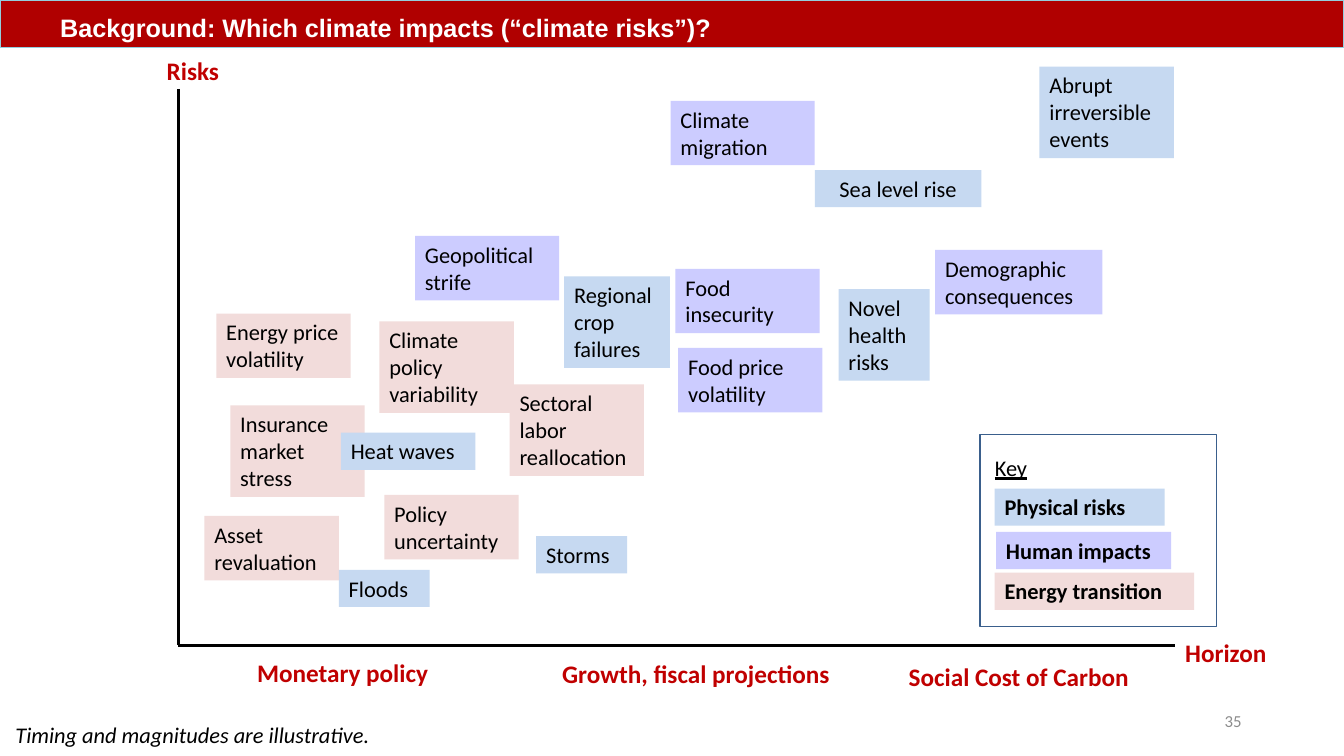
from dataclasses import dataclass

from lxml import etree
from pptx import Presentation
from pptx.dml.color import RGBColor
from pptx.enum import shapes, text
from pptx.util import Pt

HUES = {
    "banner": "B00000", "trim": "93CDDD", "white": "FFFFFF",
    "black": "000000", "red": "C00000", "gray": "8C8C8C", "frame": "3A5F8C",
    "physical": "C6D9F1", "human": "CCCCFF", "energy": "F2DCDB",
}
LEFT, CENTER, RIGHT = (text.PP_ALIGN.LEFT, text.PP_ALIGN.CENTER,
                       text.PP_ALIGN.RIGHT)
TOP, MIDDLE, BOTTOM = (text.MSO_ANCHOR.TOP, text.MSO_ANCHOR.MIDDLE,
                       text.MSO_ANCHOR.BOTTOM)


@dataclass
class Risk:
    label: str
    kind: str
    x: float
    y: float
    width: float
    lines: int = 1
    bold: bool = False
    align: int = LEFT


@dataclass
class Label:
    words: str
    x: float
    y: float
    width: float


RISKS = [
    Risk("Asset revaluation", "energy", 146, 368.5, 96, 2),
    Risk("Regional crop failures", "physical", 403, 197.5, 75.5, 3),
    Risk("Climate migration", "human", 479, 72, 103, 2),
    Risk("Storms", "physical", 383, 383, 65),
    Risk("Food price volatility", "human", 484.5, 248.5, 103, 2),
    Risk("Demographic consequences", "human", 668, 178.5, 119.5, 2),
    Risk("Floods", "physical", 242, 407, 65),
    Risk("Geopolitical strife", "human", 296.5, 168.5, 103, 2),
    Risk("Abrupt irreversible events", "physical", 742.5, 47.5, 96, 3),
    Risk("Sea level rise", "physical", 582, 121.5, 119, align=CENTER),
    Risk("Energy price volatility", "energy", 154.5, 224, 96, 2),
    Risk("Sectoral labor reallocation", "energy", 364, 274.5, 96, 3),
    Risk("Insurance market stress", "energy", 164.5, 289.5, 96, 3),
    Risk("Climate policy variability", "energy", 271, 229.5, 96, 3),
    Risk("Policy uncertainty", "energy", 274.5, 353.5, 96, 2),
    Risk("Novel health risks", "physical", 599, 206.5, 65, 3),
    Risk("Food insecurity", "human", 482.5, 192, 103, 2),
    Risk("Heat waves", "physical", 243.5, 309, 96),
]
KEY = [
    Risk("Physical risks", "physical", 710.5, 349, 121.5, bold=True),
    Risk("Energy transition", "energy", 710.5, 409, 142.5, bold=True),
    Risk("Human impacts", "human", 711.5, 380, 125, bold=True),
]
LABELS = [
    Label("Risks", 112, 36, 52),
    Label("Horizon", 839.5, 452, 73),
    Label("Monetary policy", 176.5, 466, 137.5),
    Label("Growth, fiscal projections", 394.5, 467, 207.5),
    Label("Social Cost of Carbon", 642, 469, 173),
]


def color(name: str) -> RGBColor:
    return RGBColor.from_string(HUES[name])


def write(shape, words: str, *, size: float = 16, hue: str = "black",
          face: str = "Calibri", bold: bool = False, italic: bool = False,
          under: bool = False, align: int = LEFT, anchor: int = TOP,
          wrap: bool = True, grow: bool = True) -> None:
    frame = shape.text_frame
    frame.word_wrap = wrap
    frame.auto_size = (text.MSO_AUTO_SIZE.SHAPE_TO_FIT_TEXT if grow
                       else text.MSO_AUTO_SIZE.NONE)
    frame.vertical_anchor = anchor
    para = frame.paragraphs[0]
    para.alignment = align
    run = para.add_run()
    run.text = words
    font = run.font
    font.name, font.size = face, Pt(size)
    font.bold, font.italic, font.underline = bold, italic, under
    font.color.rgb = color(hue)


def add_text(slide, words: str, x: float, y: float, width: float,
             height: float, **form) -> None:
    box = slide.shapes.add_textbox(Pt(x), Pt(y), Pt(width), Pt(height))
    write(box, words, **form)


def add_rect(slide, x: float, y: float, width: float, height: float):
    rect = slide.shapes.add_shape(shapes.MSO_SHAPE.RECTANGLE,
                                  Pt(x), Pt(y), Pt(width), Pt(height))
    rect.shadow.inherit = False
    return rect


def add_risk(slide, risk: Risk) -> None:
    rect = add_rect(slide, risk.x, risk.y, risk.width,
                    7.2 + 19.4 * risk.lines)
    rect.fill.solid()
    rect.fill.fore_color.rgb = color(risk.kind)
    rect.line.fill.background()
    write(rect, risk.label, bold=risk.bold, align=risk.align)


def add_axis(slide, x1: float, y1: float, x2: float, y2: float) -> None:
    axis = slide.shapes.add_connector(shapes.MSO_CONNECTOR.STRAIGHT,
                                      Pt(x1), Pt(y1), Pt(x2), Pt(y2))
    axis.line.color.rgb = color("black")
    axis.line.width = Pt(2)
    props = axis._element.spPr
    etree.SubElement(props, "{http://schemas.openxmlformats.org/"
                            "drawingml/2006/main}effectLst")


def add_title(slide) -> None:
    title = slide.shapes.title
    title.left, title.top = Pt(0), Pt(0)
    title.width, title.height = Pt(960), Pt(34)
    title.fill.solid()
    title.fill.fore_color.rgb = color("banner")
    title.line.color.rgb = color("trim")
    title.line.width = Pt(0)
    title.text_frame.margin_left = Pt(43)
    write(title, "Background: Which climate impacts (“climate risks”)?",
          size=18, hue="white", face="Arial", bold=True, anchor=BOTTOM,
          grow=False)


def add_key(slide) -> None:
    for risk in KEY:
        add_risk(slide, risk)
    add_text(slide, "Key", 703.5, 320.5, 38, 26.6, under=True, wrap=False)
    frame = add_rect(slide, 700, 310.5, 169, 137)
    frame.fill.background()
    frame.line.color.rgb = color("frame")
    frame.line.width = Pt(1)


def main() -> None:
    deck = Presentation()
    deck.slide_width, deck.slide_height = Pt(960), Pt(540)
    slide = deck.slides.add_slide(deck.slide_layouts[5])
    add_title(slide)
    add_text(slide, "35", 678, 500.5, 216, 29, size=12, hue="gray",
             align=RIGHT, anchor=MIDDLE, grow=False)
    add_axis(slide, 127.5, 63.5, 127.5, 461)
    add_axis(slide, 839, 461, 127.5, 461)
    for label in LABELS:
        add_text(slide, label.words, label.x, label.y, label.width, 29,
                 size=18, hue="red", bold=True, wrap=False)
    for risk in RISKS:
        add_risk(slide, risk)
    add_key(slide)
    add_text(slide, "Timing and magnitudes are illustrative.",
             4, 511.5, 282, 26.6, italic=True)
    deck.save("out.pptx")


if __name__ == "__main__":
    main()
